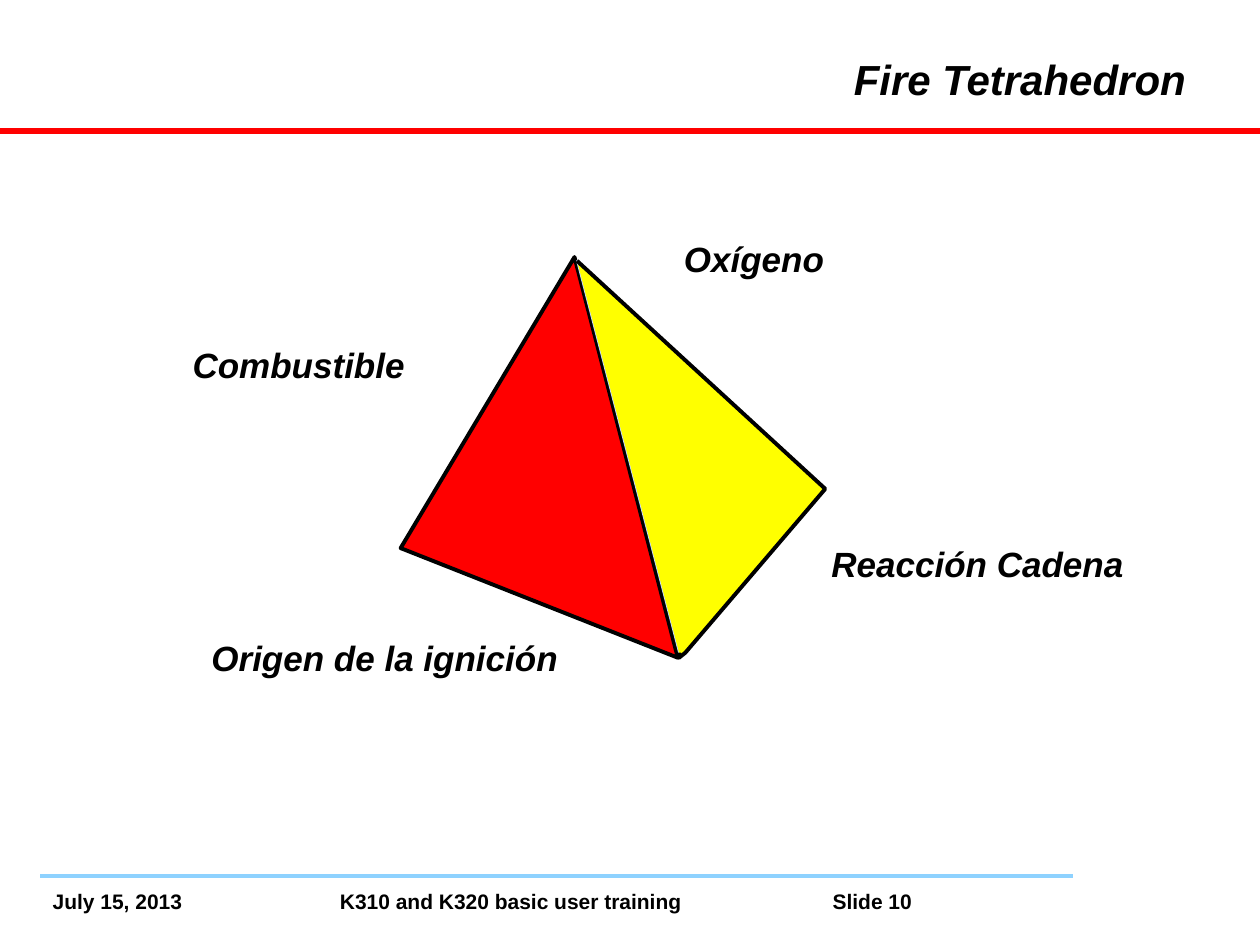
from lxml import etree
from pptx import Presentation
from pptx.dml.color import RGBColor
from pptx.enum.shapes import MSO_CONNECTOR
from pptx.enum.text import MSO_ANCHOR, PP_ALIGN
from pptx.oxml.ns import qn
from pptx.util import Inches, Pt

STRAIGHT = MSO_CONNECTOR.STRAIGHT
LEFT, RIGHT = PP_ALIGN.LEFT, PP_ALIGN.RIGHT
MIDDLE = MSO_ANCHOR.MIDDLE

BLACK = RGBColor(0x00, 0x00, 0x00)
RED = RGBColor(0xFF, 0x00, 0x00)
YELLOW = RGBColor(0xFF, 0xFF, 0x00)
SKY = RGBColor(0x8E, 0xD2, 0xFF)
PALE_BLUE = RGBColor(0xC1, 0xD6, 0xFF)

WIDTH, HEIGHT = 10, 7.5
FOOTER_TOP = 7
LABEL_HEIGHT = 0.44

# Corners of the two visible faces, in inches
RED_FACE = [(4.56, 2.04), (3.18, 4.35), (5.38, 5.22)]
YELLOW_FACE = [(4.58, 2.07), (6.55, 3.88), (5.44, 5.18),
               (5.39, 5.22), (5.39, 5.18)]

# Text, left, top, width
LABELS = [
    ("Oxígeno", 5.33, 1.83, 1.33),
    ("Reacción Cadena", 6.5, 4.25, 2.54),
    ("Combustible", 1.43, 2.67, 2.2),
    ("Origen de la ignición", 1.58, 5, 2.97),
]


def add_text(slide, text, left, top, width, height, size,
             italic=False, align=LEFT, wrap=True, tab=None):
    box = slide.shapes.add_textbox(Inches(left), Inches(top),
                                   Inches(width), Inches(height))
    tf = box.text_frame
    tf.word_wrap = wrap
    tf.vertical_anchor = MIDDLE
    p = tf.paragraphs[0]
    p.text = text
    p.alignment = align
    if tab:
        tabs = etree.SubElement(p._p.get_or_add_pPr(), qn("a:tabLst"))
        etree.SubElement(tabs, qn("a:tab"), pos=str(Inches(tab)), algn="l")
    for r in p.runs:
        r.font.name = "Arial"
        r.font.size = Pt(size)
        r.font.bold = True
        r.font.italic = italic
        r.font.color.rgb = BLACK


def add_rule(slide, left, right, y, color, weight):
    line = slide.shapes.add_connector(STRAIGHT, Inches(left), Inches(y),
                                      Inches(right), Inches(y))
    line.line.color.rgb = color
    line.line.width = Pt(weight)
    etree.SubElement(line._element.spPr, qn("a:effectLst"))


def add_face(slide, corners, fill, edge, weight, close=True):
    points = [(Inches(x), Inches(y)) for x, y in corners]
    builder = slide.shapes.build_freeform(*points[0])
    builder.add_line_segments(points[1:], close=close)
    sp = builder.convert_to_shape()
    sp.shadow.inherit = False
    sp.fill.solid()
    sp.fill.fore_color.rgb = fill
    sp.line.color.rgb = edge
    sp.line.width = Pt(weight)


def main():
    prs = Presentation()
    prs.slide_width, prs.slide_height = Inches(WIDTH), Inches(HEIGHT)
    slide = prs.slides.add_slide(prs.slide_layouts[6])

    # Footer
    add_text(slide, "July 15, 2013\tK310 and K320 basic user training",
             0.32, FOOTER_TOP, 7.43, 0.3, 12, tab=2.28)
    add_text(slide, "Slide 10", 6.51, FOOTER_TOP, 1.23, 0.3, 12)
    add_rule(slide, 0.32, 8.52, 6.95, SKY, 2.5)

    # Title
    add_text(slide, "Fire Tetrahedron", 2.32, 0, 7.19, 1.25, 24,
             italic=True, align=RIGHT)

    # Tetrahedron: the yellow face has a pale edge under an open black outline
    add_face(slide, RED_FACE, RED, BLACK, 2.25)
    add_face(slide, YELLOW_FACE, YELLOW, PALE_BLUE, 1)
    add_face(slide, YELLOW_FACE, YELLOW, BLACK, 2.25, close=False)

    # Labels around the faces
    for text, left, top, width in LABELS:
        add_text(slide, text, left, top, width, LABEL_HEIGHT, 20,
                 italic=True, wrap=False)

    # Rule below the title
    add_rule(slide, 0, WIDTH, 1.04, RED, 3)

    prs.save("out.pptx")


if __name__ == "__main__":
    main()
